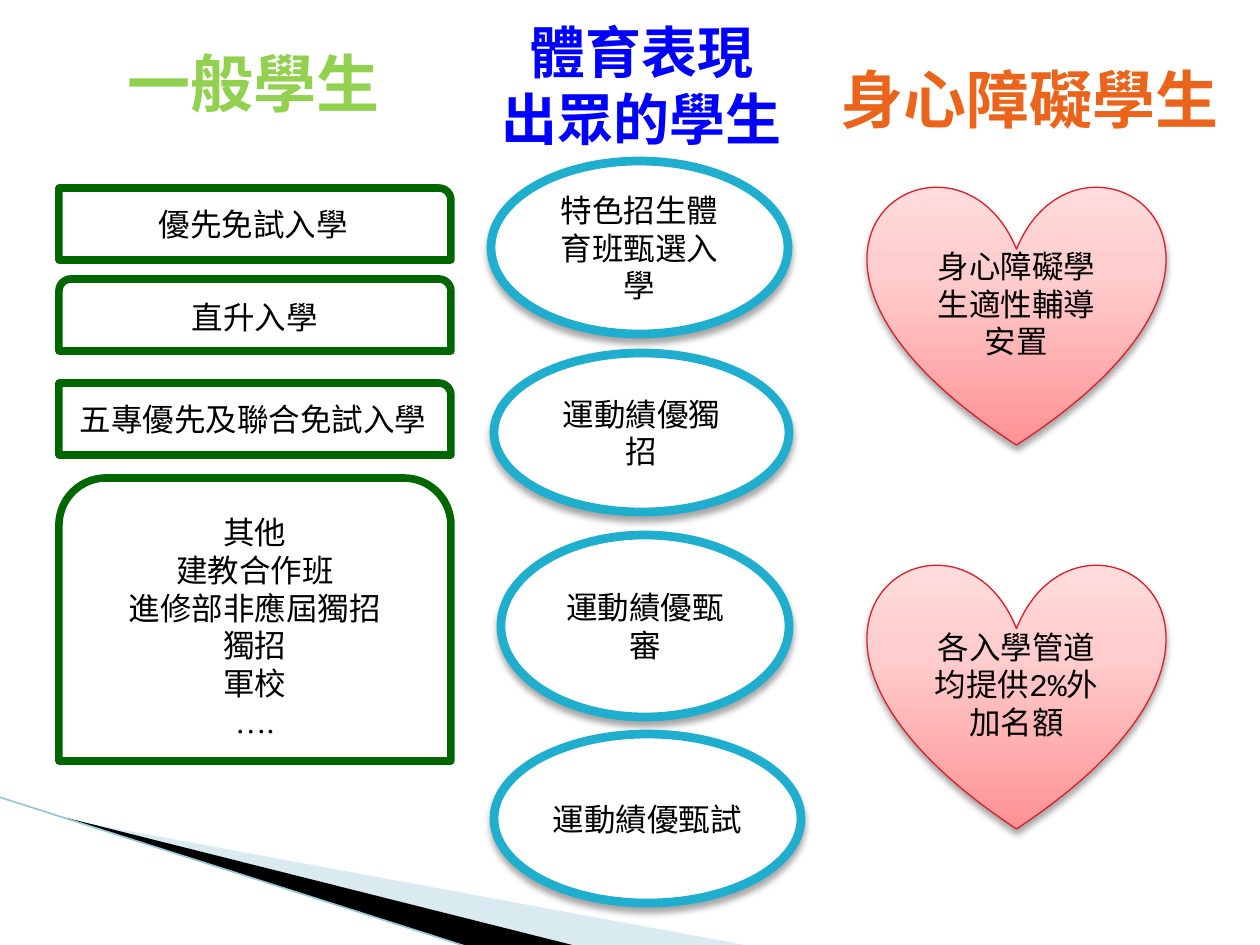
from lxml.etree import SubElement
from pptx import Presentation
from pptx.dml.color import RGBColor
from pptx.enum.shapes import MSO_CONNECTOR, MSO_SHAPE
from pptx.enum.text import MSO_ANCHOR, MSO_AUTO_SIZE, PP_ALIGN
from pptx.oxml.ns import qn
from pptx.util import Pt

PX = 914400 / 126
CJK = "Noto Sans CJK SC"
SERIF = "Times New Roman"
MONO = "Courier New"

BLACK = RGBColor(0x00, 0x00, 0x00)
WHITE = RGBColor(0xFF, 0xFF, 0xFF)
LIME = RGBColor(0x92, 0xD0, 0x50)
BLUE = RGBColor(0x00, 0x00, 0xFF)
ORANGE = RGBColor(0xEB, 0x64, 0x1B)
GREEN = RGBColor(0x00, 0x66, 0x00)
CYAN = RGBColor(0x1F, 0xAE, 0xCD)
RED = RGBColor(0xDA, 0x1F, 0x28)
PALE = RGBColor(0xA0, 0xCB, 0xDC)
EDGE = RGBColor(0x97, 0xC5, 0xD8)
PINKS = [(0, RGBColor(0xFF, 0x92, 0x94)), (65, RGBColor(0xFF, 0xCD, 0xCD)),
         (100, RGBColor(0xFF, 0xDC, 0xDC))]

# Content: boxes are left, top, width, height in px
HEADINGS = [
    (["一般學生"], (115, 38, 280, 89), 36, LIME, PP_ALIGN.LEFT),
    (["體育表現", "出眾的學生"], (488, 11, 308, 149), 32, BLUE, PP_ALIGN.CENTER),
    (["身心障礙學生"], (828, 54, 407, 89), 36, ORANGE, PP_ALIGN.LEFT),
]
ONE, TWO = MSO_SHAPE.ROUND_1_RECTANGLE, MSO_SHAPE.ROUND_2_SAME_RECTANGLE
GENERAL = [
    (ONE, 188, 72, ["優先免試入學"]),
    (TWO, 279, 72, ["直升入學"]),
    (ONE, 383, 72, ["五專優先及聯合免試入學"]),
    (TWO, 478, 283, ["其他", "建教合作班", "進修部非應屆獨招", "獨招", "軍校", "…."]),
]
SPORTS = [
    ((491, 161, 297, 173), "特色招生體育班甄選入學"),
    ((494, 353, 295, 159), "運動績優獨招"),
    ((501, 535, 288, 182), "運動績優甄審"),
    ((494, 734, 307, 169), "運動績優甄試"),
]
HEARTS = [
    ((868, 184, 297, 261), "身心障礙學生適性輔導安置"),
    ((868, 562, 297, 267), "各入學管道均提供2%外加名額"),
]
WEDGES = [
    ([(69, 820), (750, 946), (575, 946), (69, 819)], PALE, 40),
    ([(67, 818), (576, 946), (469, 947), (68, 819)], BLACK, 100),
]


def emu(*lengths):
    return [round(n * PX) for n in lengths]


def write(tf, lines, size=18, font=CJK, color=BLACK, bold=False,
          align=PP_ALIGN.CENTER):
    for i, line in enumerate(lines):
        p = tf.paragraphs[0] if i == 0 else tf.add_paragraph()
        p.alignment = align
        r = p.add_run()
        r.text = line
        r.font.size, r.font.bold, r.font.name = Pt(size), bold, font
        r.font.color.rgb = color
        SubElement(r.font._element, qn("a:ea"), typeface=CJK)


def add_alpha(clr, percent):
    SubElement(clr, qn("a:alpha"), val=str(percent * 1000))


def add_shadow(sp):
    effects = sp._element.spPr.find(qn("a:effectLst"))
    shadow = SubElement(effects, qn("a:outerShdw"), blurRad=str(Pt(4)),
                        dist=str(Pt(3)), dir="5400000", rotWithShape="0")
    add_alpha(SubElement(shadow, qn("a:srgbClr"), val=str(BLACK)), 35)


def add_box(kind, box, lines, line, width, font=CJK, shadow=False):
    sp = s.shapes.add_shape(kind, *emu(*box))
    sp.fill.solid()
    sp.fill.fore_color.rgb = WHITE
    sp.line.color.rgb, sp.line.width = line, Pt(width)
    sp.shadow.inherit = False
    if shadow:
        add_shadow(sp)
    tf = sp.text_frame
    tf.word_wrap, tf.vertical_anchor = True, MSO_ANCHOR.MIDDLE
    write(tf, lines, font=font)
    return sp


def fill_pink(sp):
    sp.fill.gradient()
    sp.fill.gradient_angle = 90
    stops = sp._element.spPr.find(qn("a:gradFill")).find(qn("a:gsLst"))
    for old in list(stops):
        stops.remove(old)
    for pos, color in PINKS:
        gs = SubElement(stops, qn("a:gs"), pos=str(pos * 1000))
        SubElement(gs, qn("a:srgbClr"), val=str(color))


prs = Presentation()
prs.slide_width, prs.slide_height = emu(1260, 945)
s = prs.slides.add_slide(prs.slide_layouts[6])

# Corner decoration
for points, color, opacity in WEDGES:
    builder = s.shapes.build_freeform(*points[0], scale=PX)
    builder.add_line_segments(points[1:], close=True)
    sp = builder.convert_to_shape()
    sp.fill.solid()
    sp.fill.fore_color.rgb = color
    if opacity < 100:
        add_alpha(sp._element.spPr.find(qn("a:solidFill"))[0], opacity)
    sp.line.fill.background()
    sp.shadow.inherit = False
edge = s.shapes.add_connector(MSO_CONNECTOR.STRAIGHT, *emu(-1, 797, 468, 947))
edge.line.color.rgb, edge.line.width = EDGE, Pt(0.95)
SubElement(edge._element.spPr, qn("a:effectLst"))

# Column headings
for lines, box, size, color, align in HEADINGS:
    tf = s.shapes.add_textbox(*emu(*box)).text_frame
    tf.word_wrap, tf.auto_size = False, MSO_AUTO_SIZE.SHAPE_TO_FIT_TEXT
    write(tf, lines, size=size, color=color, bold=True, align=align)

# General students
for kind, top, height, lines in GENERAL:
    add_box(kind, (59, top, 392, height), lines, GREEN, 4.33, font=SERIF)

# Students who excel in sports
for box, text in SPORTS:
    add_box(MSO_SHAPE.OVAL, box, [text], CYAN, 5, shadow=True)

# Students with disabilities
for box, text in HEARTS:
    heart = add_box(MSO_SHAPE.HEART, box, [text], RED, 0.75, font=MONO, shadow=True)
    fill_pink(heart)
    tf = heart.text_frame
    tf.margin_left, tf.margin_right = emu(16, 16)

prs.save("out.pptx")
